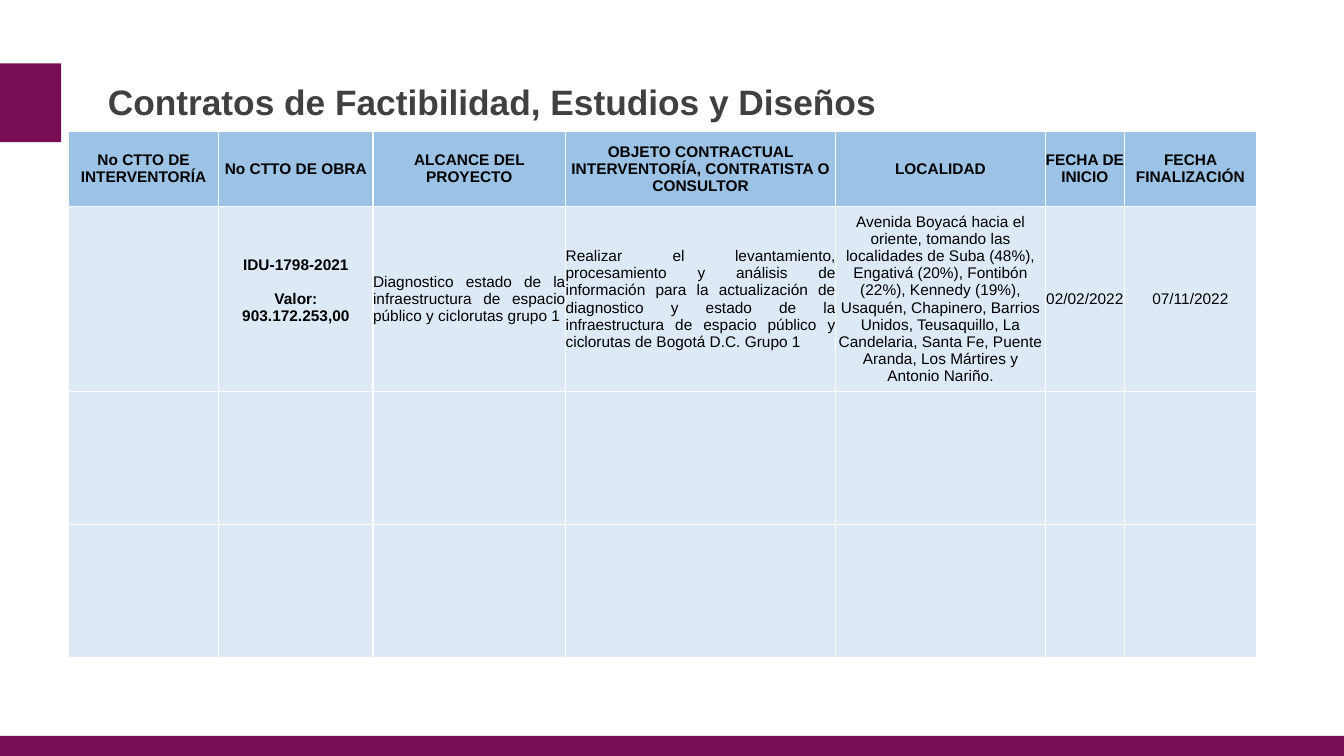
"""Build a slide with a table of feasibility, study and design contracts."""
from lxml.etree import SubElement
from pptx import Presentation
from pptx.dml.color import RGBColor
from pptx.enum.shapes import MSO_SHAPE
from pptx.enum.text import MSO_ANCHOR, PP_ALIGN
from pptx.oxml import parse_xml
from pptx.oxml.ns import nsdecls, qn
from pptx.util import Inches, Pt

COLORS = {"plum": "780D53", "title": "404040", "text": "000000",
          "header": "9CC2E5", "body": "DDEAF6", "border": "FFFFFF"}

deck = Presentation()
deck.slide_width, deck.slide_height = Inches(13.33), Inches(7.5)
page = deck.slides.add_slide(deck.slide_layouts[6])


def share(left, top, width, height):
    """Turn percentages of the slide's size into lengths."""
    return [int(side * percent / 100) for side, percent in zip(
        (deck.slide_width, deck.slide_height) * 2, (left, top, width, height))]


def write(para, text, color, size, bold):
    """Add a formatted span to a paragraph."""
    span = para.add_run()
    span.text = text
    for name, value in {"name": "Arial", "size": Pt(size), "bold": bold}.items():
        setattr(span.font, name, value)
    span.font.color.rgb = RGBColor.from_string(COLORS[color])


for area in [(0, 8.4, 4.55, 10.4), (0, 97.33, 100, 2.67)]:
    bar = page.shapes.add_shape(MSO_SHAPE.RECTANGLE, *share(*area))
    bar.shadow.inherit = False
    bar.fill.solid()
    bar.fill.fore_color.rgb = RGBColor.from_string(COLORS["plum"])
    bar.line.fill.background()

title = page.shapes.add_textbox(*share(7.65, 10.53, 60.84, 9.07)).text_frame
for name, value in {"word_wrap": True, "margin_left": Inches(0.05),
                    "margin_right": Inches(0.05), "margin_top": Inches(0.05),
                    "margin_bottom": Inches(0.05)}.items():
    setattr(title, name, value)
title.paragraphs[0].line_spacing = 0.9
write(title.paragraphs[0], "Contratos de Factibilidad, Estudios y Diseños", "title", 25.2, True)

column_shares = [11.18, 11.48, 14.33, 20.1, 15.6, 5.88, 9.83]
row_shares = [10, 22.8, 17.6, 17.6]
headers = ["No CTTO DE INTERVENTORÍA", "No CTTO DE OBRA", "ALCANCE DEL PROYECTO",
           "OBJETO CONTRACTUAL INTERVENTORÍA, CONTRATISTA O CONSULTOR",
           "LOCALIDAD", "FECHA DE INICIO", "FECHA FINALIZACIÓN"]
contract = [
    "",
    "IDU-1798-2021\nValor:\n903.172.253,00",
    "Diagnostico estado de la infraestructura de espacio público y ciclorutas grupo 1",
    "Realizar el levantamiento, procesamiento y análisis de información para la "
    "actualización de diagnostico y estado de la infraestructura de espacio público "
    "y ciclorutas de Bogotá D.C. Grupo 1",
    "Avenida Boyacá hacia el oriente, tomando las localidades de Suba (48%), "
    "Engativá (20%), Fontibón (22%), Kennedy (19%), Usaquén, Chapinero, Barrios "
    "Unidos, Teusaquillo, La Candelaria, Santa Fe, Puente Aranda, Los Mártires y "
    "Antonio Nariño.",
    "02/02/2022",
    "07/11/2022",
]
blank = [""] * len(headers)
rows = [headers, contract, blank, blank]

area = share(5.1, 17.33, sum(column_shares), sum(row_shares))
table = page.shapes.add_table(len(rows), len(headers), *area).table
for column, width in zip(table.columns, column_shares):
    column.width = int(deck.slide_width * width / 100)
for row, height in zip(table.rows, row_shares):
    row.height = int(deck.slide_height * height / 100)

for row_index, texts in enumerate(rows):
    for column_index, text in enumerate(texts):
        cell = table.cell(row_index, column_index)
        for name, value in {"margin_left": 0, "margin_right": 0, "margin_top": 0,
                            "margin_bottom": 0,
                            "vertical_anchor": MSO_ANCHOR.MIDDLE}.items():
            setattr(cell, name, value)
        for edge in ("lnL", "lnR", "lnT", "lnB"):
            border = parse_xml(f'<a:{edge} {nsdecls("a")} w="{Pt(1)}"/>')
            fill = SubElement(border, qn("a:solidFill"))
            SubElement(fill, qn("a:srgbClr"), val=COLORS["border"])
            cell._tc.get_or_add_tcPr().append(border)
        cell.fill.solid()
        cell.fill.fore_color.rgb = RGBColor.from_string(
            COLORS["body" if row_index else "header"])
        if not text:
            continue
        justified = row_index == 1 and column_index in (2, 3)
        for line_index, line in enumerate(text.split("\n")):
            para = cell.text_frame.paragraphs[0] if line_index == 0 else cell.text_frame.add_paragraph()
            para.alignment = PP_ALIGN.JUSTIFY if justified else PP_ALIGN.CENTER
            write(para, line, "text", 11, row_index == 0 or column_index == 1)

contract_cell = table.cell(1, 1)
contract_cell.margin_bottom = Inches(0.17)
contract_cell.text_frame.paragraphs[1].space_before = Pt(12)

deck.save("out.pptx")
